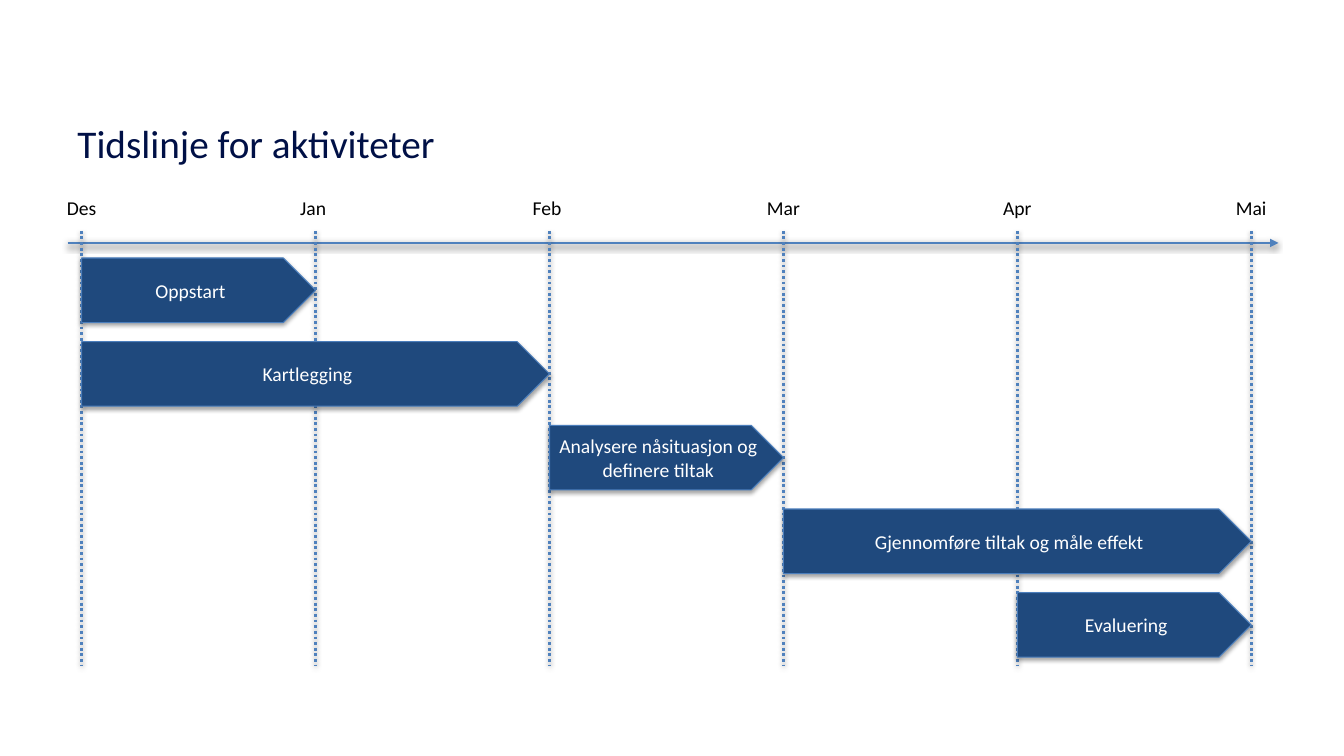
from lxml import etree
from pptx import Presentation, util as u
from pptx.dml.color import RGBColor
from pptx.enum import dml, shapes, text
from pptx.oxml import ns

NAVY = RGBColor(0x00, 0x10, 0x46)
BLACK = RGBColor(0x00, 0x00, 0x00)
WHITE = RGBColor(0xFF, 0xFF, 0xFF)
BAR_BLUE = RGBColor(0x1F, 0x49, 0x7D)
EDGE_BLUE = RGBColor(0x4B, 0x7E, 0xBC)
LINE_BLUE = RGBColor(0x4F, 0x81, 0xBD)

MONTHS = [("Des", 0), ("Jan", -0.01), ("Feb", -0.01), ("Mar", 0), ("Apr", 0), ("Mai", 0)]
ACTIVITIES = [
    ("Oppstart", 0, 1),
    ("Kartlegging", 0, 2),
    ("Analysere nåsituasjon og definere tiltak", 2, 1),
    ("Gjennomføre tiltak og måle effekt", 3, 2),
    ("Evaluering", 4, 1),
]


def write(frame, words, size=14, color=BLACK, align=text.PP_ALIGN.CENTER,
          anchor=text.MSO_ANCHOR.TOP, wrap=True, side=0.1):
    frame.word_wrap = wrap
    frame.vertical_anchor = anchor
    frame.margin_left = frame.margin_right = u.Inches(side)
    paragraph = frame.paragraphs[0]
    paragraph.alignment = align
    run = paragraph.add_run()
    run.text = words
    run.font.name = "Calibri"
    run.font.size = u.Pt(size)
    run.font.color.rgb = color


def cast_shadow(properties, opacity, distance):
    effects = etree.SubElement(properties, ns.qn("a:effectLst"))
    shadow = etree.SubElement(
        effects, ns.qn("a:outerShdw"), blurRad=str(u.Pt(3.1)),
        dist=str(u.Pt(distance)), dir="5400000", rotWithShape="0")
    tint = etree.SubElement(shadow, ns.qn("a:srgbClr"), val=str(BLACK))
    etree.SubElement(tint, ns.qn("a:alpha"), val=str(opacity * 1000))


class Timeline:
    left, column = 0.81, 2.32
    top, row, bar_height = 2.56, 0.83, 0.64

    def __init__(self, slide):
        self.shapes = slide.shapes

    def x(self, month):
        return self.left + month * self.column

    def label(self, words, left, top, width, height, **style):
        box = self.shapes.add_textbox(*map(u.Inches, (left, top, width, height)))
        write(box.text_frame, words, **style)

    def rule(self, start, end, dash=None, arrow=False):
        rule = self.shapes.add_connector(
            shapes.MSO_CONNECTOR.STRAIGHT, *map(u.Inches, start + end))
        rule.line.color.rgb = LINE_BLUE
        rule.line.width = u.Pt(2)
        if dash:
            rule.line.dash_style = dash
        if arrow:
            etree.SubElement(rule.line._get_or_add_ln(), ns.qn("a:tailEnd"), type="triangle")
        cast_shadow(rule._element.spPr, 38, 1.6)

    def month(self, index, name, nudge):
        self.rule((self.x(index), 2.29), (self.x(index), 6.6),
                  dash=dml.MSO_LINE.ROUND_DOT)
        width = 0.66
        self.label(name, self.x(index + nudge) - width / 2, 1.89, width, 0.34, wrap=False)

    def activity(self, row, name, start, months):
        bar = self.shapes.add_shape(
            shapes.MSO_SHAPE.PENTAGON,
            *map(u.Inches, (self.x(start), self.top + row * self.row,
                            months * self.column, self.bar_height)))
        bar.fill.solid()
        bar.fill.fore_color.rgb = BAR_BLUE
        bar.line.color.rgb = EDGE_BLUE
        bar.line.width = u.Pt(0.75)
        cast_shadow(bar._element.spPr, 35, 1.8)
        write(bar.text_frame, name, color=WHITE, anchor=text.MSO_ANCHOR.MIDDLE, side=0.09)


def main():
    deck = Presentation()
    deck.slide_width, deck.slide_height = u.Inches(13.33), u.Inches(7.5)
    timeline = Timeline(deck.slides.add_slide(deck.slide_layouts[6]))
    timeline.label("Tidslinje for aktiviteter", 0.67, 0.8, 12, 1.24, size=28, color=NAVY,
                   align=text.PP_ALIGN.LEFT, anchor=text.MSO_ANCHOR.MIDDLE)
    timeline.rule((0.67, 2.41), (12.68, 2.41), arrow=True)
    for index, (name, nudge) in enumerate(MONTHS):
        timeline.month(index, name, nudge)
    for row, (name, start, months) in enumerate(ACTIVITIES):
        timeline.activity(row, name, start, months)
    deck.save("out.pptx")


if __name__ == "__main__":
    main()
